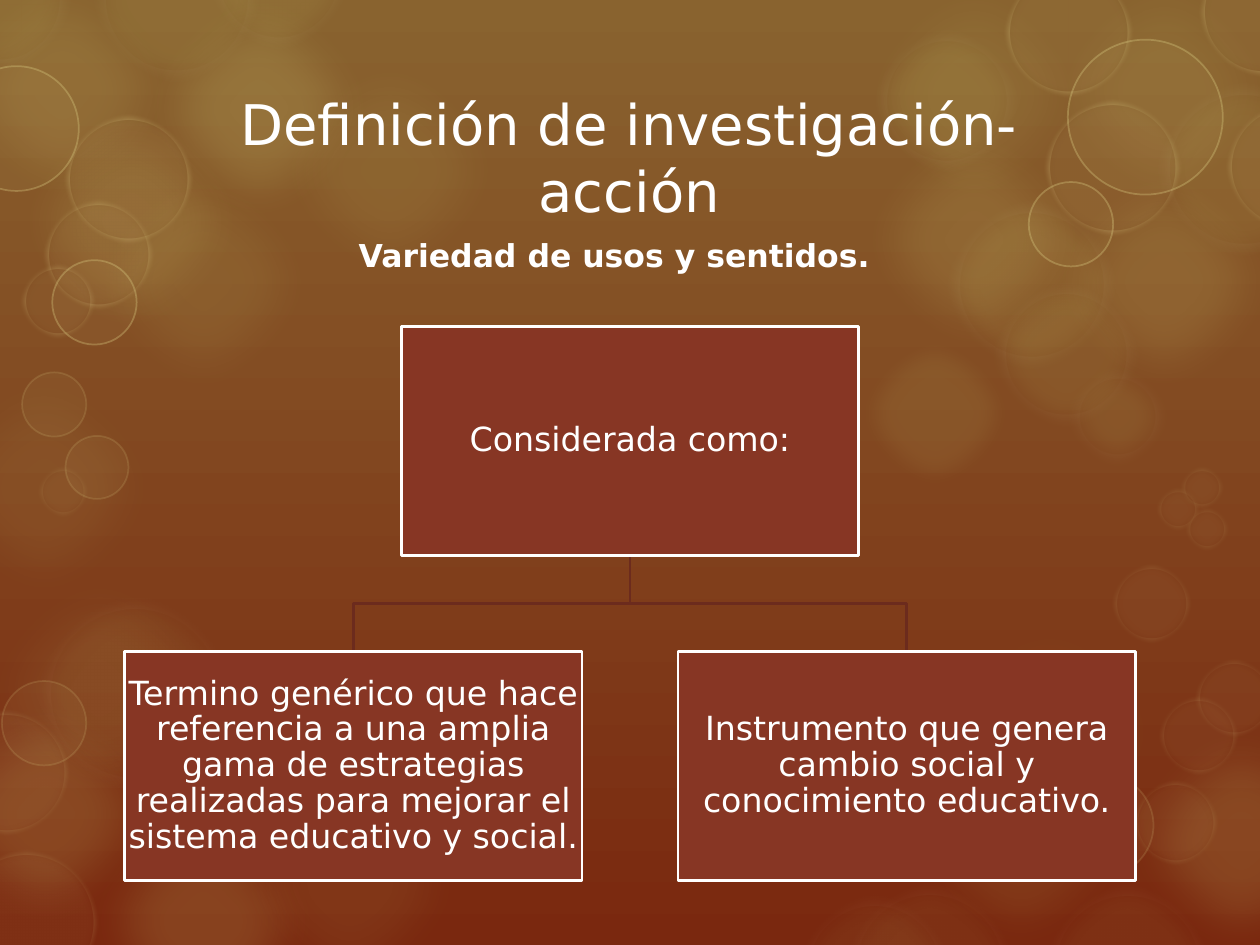
from collections import namedtuple

from lxml.etree import SubElement
from pptx import Presentation
from pptx.dml.color import RGBColor
from pptx.enum.shapes import MSO_SHAPE
from pptx.enum.text import MSO_ANCHOR, MSO_AUTO_SIZE, PP_ALIGN
from pptx.oxml.ns import qn
from pptx.util import Inches, Pt

Box = namedtuple("Box", "left top width height")
Glow = namedtuple("Glow", "fill opacity line weight line_opacity blur")

WIDTH, HEIGHT = 10, 7.5
FONT = "DejaVu Sans"
WHITE, RUST, BRANCH = "FFFFFF", "873624", "6C2B1D"
OLIVE, SAND, CREAM = "D1CA75", "E3D88C", "F4F2DD"
TREE_COLUMNS, NODE_COLUMNS = 42, 19
TREE_ROWS, NODE_ROWS = 29, 12

HAZE_SIZE = 2.09
HAZE = [
    (0.79, 5.46, 8), (1.61, 2.24, 10), (3.09, 1.35, 10), (1.61, 7.31, 16),
    (0.49, 0.72, 14), (2.05, 0.86, 20), (1.04, 1.76, 15), (9.24, 0.72, 10),
    (7.73, 0.75, 10), (9.24, 2.24, 15), (9.85, 6.67, 16), (8.33, 5.81, 5),
    (0.36, 6.46, 16), (1.81, 6.28, 8), (7.73, 1.9, 15), (8.1, 6.66, 10),
    (2.78, 7.01, 8), (0.35, 3.87, 8),
]
RINGS = [
    (Glow(OLIVE, 10, CREAM, 14, 6, 12), [
        (9.87, 1.34, 1.37), (7.51, 0.8, 1.14), (8.19, 2.26, 1.33),
        (8.46, 2.81, 1.14), (8.87, 3.31, 0.79), (1.4, 0, 1.31),
        (2.21, -0.18, 1.14), (0, 0, 1.13)]),
    (Glow(OLIVE, 6, CREAM, 14, 4, 12), [
        (1.07, 5.5, 1.53), (6.94, 7.72, 1.25), (7.38, 7.69, 1.36),
        (8.95, 7.68, 1.33)]),
    (Glow(SAND, 5, SAND, 5, 15, 4), [
        (0.21, 7.32, 1.13), (0.05, 6.13, 0.98), (9.33, 6.53, 0.66),
        (9.14, 4.79, 0.61), (9.51, 5.84, 0.61), (9.8, 5.54, 0.61),
        (9.54, 3.87, 0.33), (9.35, 4.04, 0.33), (9.58, 4.2, 0.33),
        (0.5, 3.9, 0.39)]),
    (Glow(SAND, 5, SAND, 5, 30, 4), [
        (1.02, 1.42, 1), (0.78, 2.02, 0.85), (0.46, 2.39, 0.57),
        (8.48, 0.26, 0.99), (10.03, 0.1, 1), (10.24, 1.32, 0.99),
        (8.83, 1.33, 1.06)]),
    (Glow(SAND, 5, SAND, 1, 15, 0), [
        (0.35, 5.74, 0.67), (8.75, 6.55, 0.81), (8.61, 5.8, 0.81),
        (0.43, 3.21, 0.51), (0.77, 3.71, 0.5)]),
    (Glow(SAND, 5, SAND, 1, 30, 0), [
        (0.13, 1.02, 0.99), (0.75, 2.4, 0.67), (9.09, 0.93, 1.23),
        (8.5, 1.78, 0.67)]),
    (Glow(OLIVE, 10, None, 0, 0, 12), [(7.42, 3.28, 1.33)]),
]


def paint(target, color):
    target.rgb = RGBColor.from_string(color)


def inches(lengths):
    return [Inches(length) for length in lengths]


def set_opacity(fill_element, percent):
    color = fill_element.find(".//" + qn("a:srgbClr"))
    SubElement(color, qn("a:alpha"), val=str(percent * 1000))


def add_glow(page, center_x, center_y, size, glow):
    box = Box(center_x - size / 2, center_y - size / 2, size, size)
    circle = page.shapes.add_shape(MSO_SHAPE.OVAL, *inches(box))
    circle.shadow.inherit = False
    circle.fill.solid()
    paint(circle.fill.fore_color, glow.fill)
    properties = circle.element.spPr
    set_opacity(properties.find(qn("a:solidFill")), glow.opacity)
    if glow.line:
        circle.line.width = Pt(glow.weight)
        paint(circle.line.color, glow.line)
        set_opacity(properties.find(qn("a:ln")), glow.line_opacity)
    else:
        circle.line.fill.background()
    if glow.blur:
        effects = properties.find(qn("a:effectLst"))
        SubElement(effects, qn("a:softEdge"), rad=str(Pt(glow.blur)))


def add_backdrop(page):
    fill = page.background.fill
    fill.gradient()
    fill.gradient_angle = 270
    for stop, color in zip(fill.gradient_stops, ("89632F", "7A280F")):
        paint(stop.color, color)
    for center_x, center_y, opacity in HAZE:
        glow = Glow(OLIVE, opacity, None, 0, 0, 25)
        add_glow(page, center_x, center_y, HAZE_SIZE, glow)
    for glow, circles in RINGS:
        for circle in circles:
            add_glow(page, *circle, glow)


def write(shape, text, size, bold=False):
    frame = shape.text_frame
    frame.text = text
    frame.word_wrap = True
    frame.auto_size = MSO_AUTO_SIZE.NONE
    frame.vertical_anchor = MSO_ANCHOR.MIDDLE
    para = frame.paragraphs[0]
    para.alignment = PP_ALIGN.CENTER
    for span in para.runs:
        span.font.name = FONT
        span.font.size = Pt(size)
        span.font.bold = bold
        paint(span.font.color, WHITE)
    return frame


def add_heading(page, box):
    title = page.shapes.title
    title.left, title.top, title.width, title.height = inches(box)
    write(title, "Definición de investigación-acción", 32)
    title.element.getparent().append(title.element)


def add_subtitle(page, box):
    subtitle = page.shapes.add_textbox(*inches(box))
    write(subtitle, "Variedad de usos y sentidos.", 18, bold=True)


def add_node(page, box, text):
    node = page.shapes.add_shape(MSO_SHAPE.RECTANGLE, *inches(box))
    node.shadow.inherit = False
    node.fill.solid()
    paint(node.fill.fore_color, RUST)
    node.line.width = Pt(1.5)
    paint(node.line.color, WHITE)
    frame = write(node, text, 19)
    frame.margin_left = frame.margin_right = Inches(0.01)
    frame.margin_top = frame.margin_bottom = Inches(0.01)
    frame.paragraphs[0].line_spacing = 0.9


def add_branch(page, parent, child):
    start_x = parent.left + parent.width / 2
    start_y = parent.top + parent.height
    end_x = child.left + child.width / 2
    middle_y = (start_y + child.top) / 2
    corners = [(start_x, middle_y), (end_x, middle_y), (end_x, child.top)]
    builder = page.shapes.build_freeform(*inches((start_x, start_y)))
    builder.add_line_segments([inches(corner) for corner in corners], close=False)
    branch = builder.convert_to_shape()
    branch.shadow.inherit = False
    branch.fill.background()
    branch.line.width = Pt(1.5)
    paint(branch.line.color, BRANCH)


def add_tree(page, box, root_text, leaf_texts):
    width = box.width * NODE_COLUMNS / TREE_COLUMNS
    height = box.height * NODE_ROWS / TREE_ROWS
    root = Box(box.left + (box.width - width) / 2, box.top, width, height)
    step = (box.width - width) / (len(leaf_texts) - 1)
    leaf_top = box.top + box.height - height
    leaves = [Box(box.left + index * step, leaf_top, width, height)
              for index in range(len(leaf_texts))]
    for leaf in leaves:
        add_branch(page, root, leaf)
    for node, text in zip([root, *leaves], [root_text, *leaf_texts]):
        add_node(page, node, text)


def main():
    deck = Presentation()
    deck.slide_width, deck.slide_height = Inches(WIDTH), Inches(HEIGHT)
    page = deck.slides.add_slide(deck.slide_layouts[5])
    add_backdrop(page)
    add_heading(page, Box(1.1, 0.74, 7.79, 1.01))
    add_subtitle(page, Box(0.98, 1.8, 7.79, 0.45))
    add_tree(page, Box(0.99, 2.59, 8.02, 4.4), "Considerada como:", [
        "Termino genérico que hace referencia a una amplia gama de estrategias "
        "realizadas para mejorar el sistema educativo y social.",
        "Instrumento que genera cambio social y conocimiento educativo.",
    ])
    deck.save("out.pptx")


if __name__ == "__main__":
    main()
